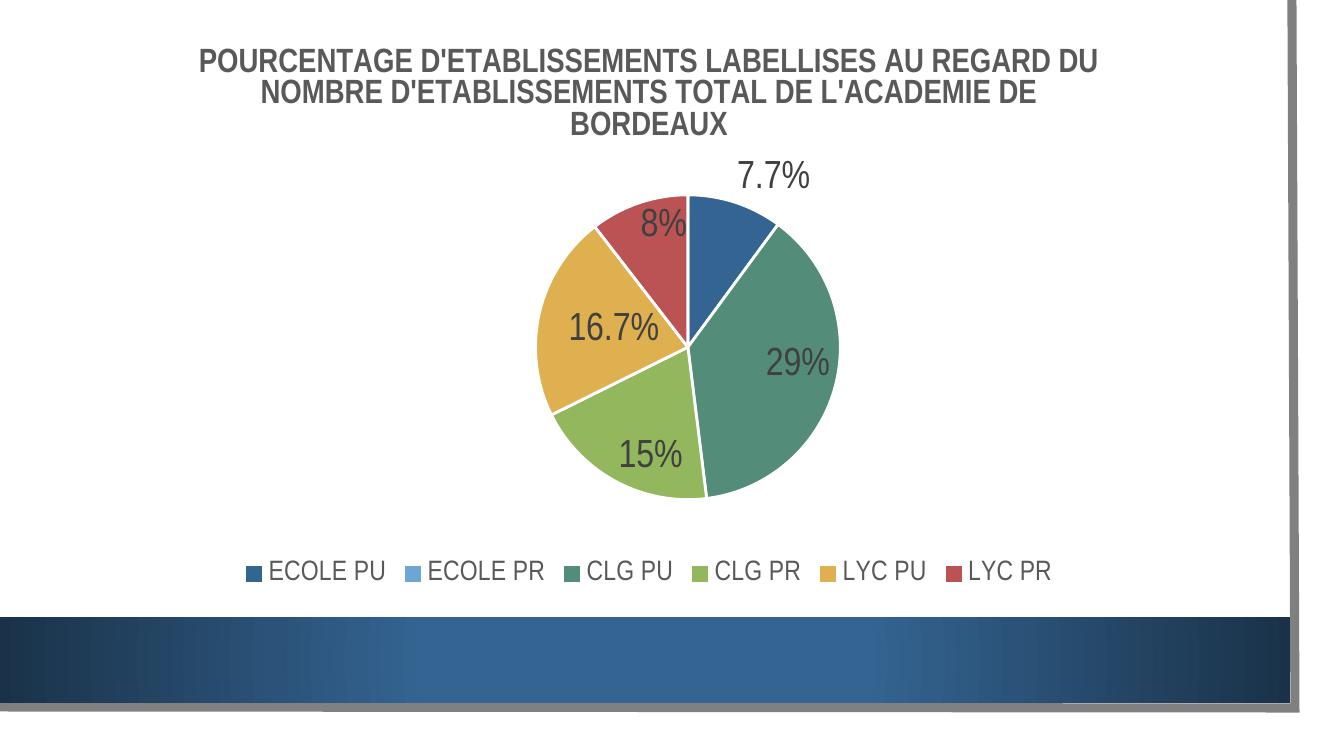
from lxml import etree
from pptx import Presentation
from pptx.chart.data import CategoryChartData
from pptx.dml.color import RGBColor
from pptx.enum.chart import XL_CHART_TYPE as ChartType
from pptx.enum.chart import XL_LABEL_POSITION as LabelSpot
from pptx.enum.chart import XL_LEGEND_POSITION as LegendSpot
from pptx.enum.shapes import MSO_SHAPE as Shape
from pptx.oxml import parse_xml
from pptx.oxml.ns import nsdecls, qn
from pptx.util import Emu, Pt

PX = 9071  # EMU in one px, at 100.8 px to the inch
FONT = "Arial Narrow"
COLORS = {
    "card": "FFFFFF", "frame": "808080", "band": "346492", "band_edge": "1A3249",
    "text": "595959", "label": "404040",
}
TITLE = ("POURCENTAGE D'ETABLISSEMENTS LABELLISES AU REGARD DU NOMBRE "
         "D'ETABLISSEMENTS TOTAL DE L'ACADEMIE DE BORDEAUX")
# category, value, slice colour, label position
SLICES = [
    ("ECOLE PU", 7.7, "346492", LabelSpot.OUTSIDE_END),
    ("ECOLE PR", 0, "6DA5D4", None),
    ("CLG PU", 29, "538C79", LabelSpot.INSIDE_END),
    ("CLG PR", 15, "93B75D", LabelSpot.INSIDE_END),
    ("LYC PU", 16.7, "DEB050", LabelSpot.CENTER),
    ("LYC PR", 8, "BB5354", LabelSpot.INSIDE_END),
]


def px(*lengths):
    return [Emu(length * PX) for length in lengths]


def rgb(name):
    return RGBColor.from_string(COLORS[name])


def style(font, size, color, bold=False):
    font.name, font.size, font.bold = FONT, Pt(size), bold
    font.color.rgb = rgb(color)


def add_rectangle(page, box):
    rectangle = page.shapes.add_shape(Shape.RECTANGLE, *px(*box))
    rectangle.shadow.inherit = False
    rectangle.line.fill.background()
    return rectangle


def add_backdrop(page, box):
    left, top, width, height = box

    # White card
    card = add_rectangle(page, box)
    card.fill.solid()
    card.fill.fore_color.rgb = rgb("card")

    # Grey edge along the right and the bottom
    right, bottom = left + width - 25, top + height - 25
    builder = page.shapes.build_freeform(right - 3, top, scale=PX)
    builder.add_line_segments([(right, bottom), (left - 3, bottom - 1)], close=False)
    frame = builder.convert_to_shape()
    frame.shadow.inherit = False
    frame.fill.background()
    frame.line.color.rgb = rgb("frame")
    frame.line.width = Pt(6.5)
    corner = etree.SubElement(frame.line.fill._xPr, qn("a:miter"))
    corner.set("lim", "800000")

    # Blue band, darker towards its ends
    band = add_rectangle(page, (left, bottom - 91, width - 30, 86))
    band.fill.gradient()
    stops = [(0.34, "band"), (1, "band_edge")]
    for stop, (position, color) in zip(band.fill.gradient_stops, stops):
        stop.position = position
        stop.color.rgb = rgb(color)
    linear = band.fill._xPr.find(".//" + qn("a:lin"))
    linear.getparent().replace(linear, parse_xml(
        f'<a:path {nsdecls("a")} path="circle">'
        '<a:fillToRect l="50000" t="50000" r="50000" b="50000"/></a:path>'))


def place_plot(chart, box, plot_box):
    """Fix the plot area; both boxes are in px, the plot relative to the chart."""
    left, top, width, height = plot_box
    shares = {"x": left / box[2], "y": top / box[3],
              "w": width / box[2], "h": height / box[3]}
    modes = "".join(f'<c:{side}Mode val="edge"/>' for side in "xy")
    sizes = "".join(f'<c:{side} val="{share:.3f}"/>' for side, share in shares.items())
    area = chart._chartSpace.find(".//" + qn("c:plotArea"))
    for layout in area.findall(qn("c:layout")):
        area.remove(layout)
    area.insert(0, parse_xml(
        f'<c:layout {nsdecls("c")}><c:manualLayout><c:layoutTarget val="inner"/>'
        f'{modes}{sizes}</c:manualLayout></c:layout>'))


def add_pie(page, box):
    data = CategoryChartData(number_format='General"%"')
    data.categories = [name for name, *_ in SLICES]
    data.add_series("Series 1", [value for _, value, *_ in SLICES])
    chart = page.shapes.add_chart(ChartType.PIE, *px(*box), data).chart
    style(chart.font, 10, "text")

    # Title and legend
    chart.has_title = True
    title = chart.chart_title
    title.include_in_layout = False
    title.text_frame.text = TITLE
    style(title.text_frame.paragraphs[0].runs[0].font, 24, "text", bold=True)
    chart.has_legend = True
    chart.legend.position = LegendSpot.BOTTOM
    chart.legend.include_in_layout = False
    style(chart.legend.font, 20, "text")

    # Slices and their labels
    plot = chart.plots[0]
    plot.vary_by_categories = True
    series = plot.series[0]
    labels = series.data_labels
    labels.show_value = True
    labels.number_format = 'General"%"'
    labels.number_format_is_linked = False
    style(labels.font, 28, "label")
    for index, (_, _, color, spot) in enumerate(SLICES):
        point = series.points[index]
        point.format.fill.solid()
        point.format.fill.fore_color.rgb = RGBColor.from_string(color)
        point.format.line.color.rgb = rgb("card")
        point.format.line.width = Pt(2)
        if spot is None:
            labels._element.insert(0, parse_xml(
                f'<c:dLbl {nsdecls("c")}><c:idx val="{index}"/>'
                '<c:delete val="1"/></c:dLbl>'))
        else:
            style(point.data_label.font, 28, "label")
            point.data_label.position = spot
    place_plot(chart, box, (459, 174, 305, 305))


def main():
    deck = Presentation()
    deck.slide_width, deck.slide_height = px(1344, 756)
    page = deck.slides.add_slide(deck.slide_layouts[6])
    add_backdrop(page, (0, 0, 1320, 733))
    add_pie(page, (76, 21, 1146, 572))
    deck.save("out.pptx")


if __name__ == "__main__":
    main()
